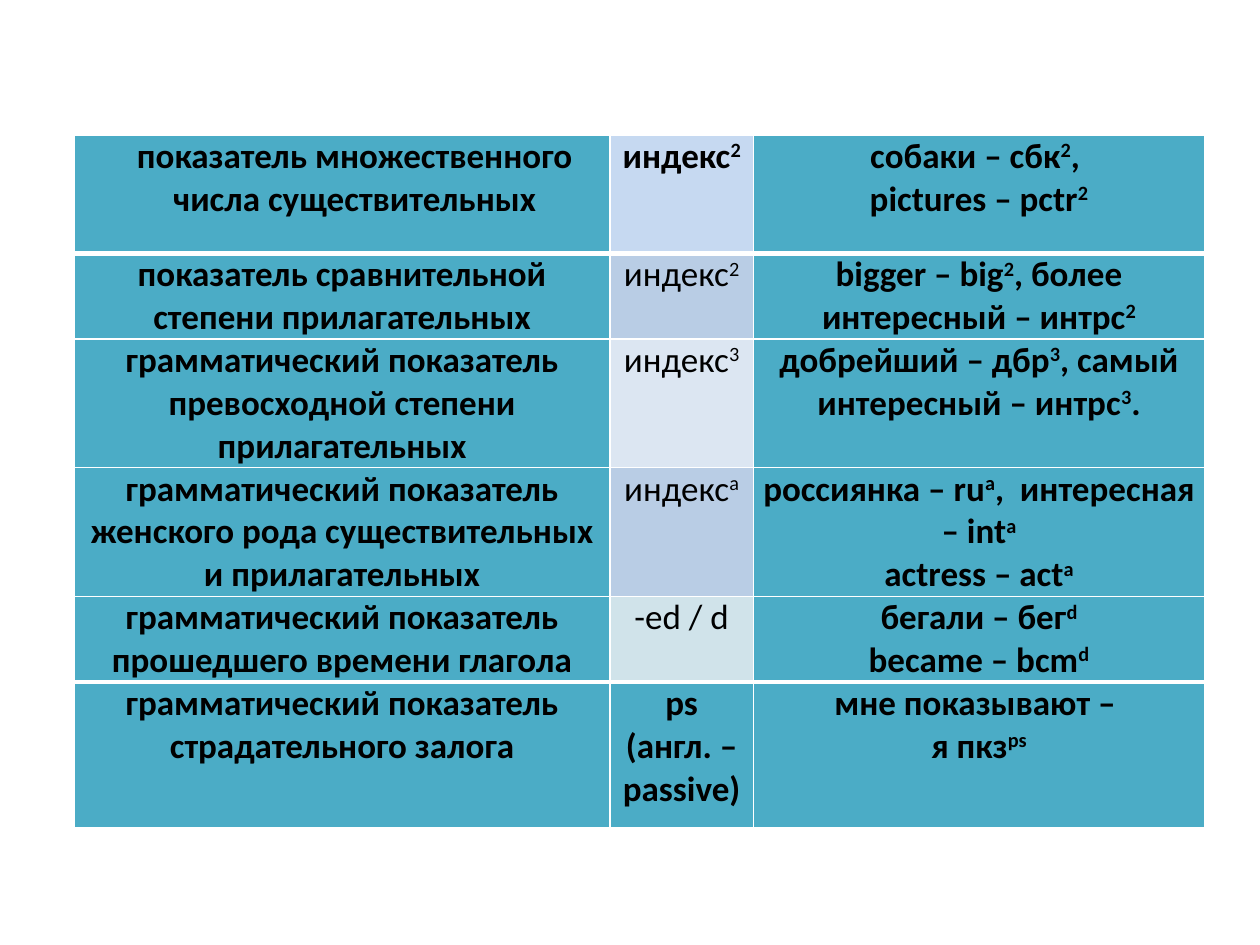
import pptx
import pptx.dml.color
import pptx.enum.text
import pptx.oxml
import pptx.oxml.ns
import pptx.util
from pptx.util import Inches

COLORS = {
    "teal": "4BACC6",
    "sky": "C6D9F1",
    "steel": "B9CDE5",
    "mist": "DCE6F2",
    "pale": "D0E3EA",
    "text": "000000",
    "border": "FFFFFF",
}
COLUMN_WIDTHS = [4.25, 1.14, 3.58]
ROW_HEIGHTS = [0.94, 0.37, 0.37, 0.37, 0.37, 1.16]
THICK_RULES = (1, 5)

# Text between carets is superscript.
ROWS = [
    ("показатель множественного числа существительных",
     "индекс^2^", "sky", True,
     ["собаки – сбк^2^, ", "pictures – pctr^2^"]),
    ("показатель сравнительной степени прилагательных",
     "индекс^2^", "steel", False,
     ["bigger – big^2^, более интересный – интрс^2^"]),
    ("грамматический показатель превосходной степени прилагательных",
     "индекс^3^", "mist", False,
     ["добрейший – дбр^3^, самый интересный – интрс^3^."]),
    ("грамматический показатель женского рода существительных и прилагательных",
     "индекс^а^", "steel", False,
     ["россиянка – ru^а^,  интересная – int^а^", "actress – act^a^"]),
    ("грамматический показатель прошедшего времени глагола",
     "-ed / d", "pale", False,
     ["бегали – бег^d^", "became – bcm^d^"]),
    ("грамматический показатель страдательного залога",
     "ps (англ. –passive)", "teal", True,
     ["мне показывают – ", "я пкз^ps^"]),
]


def rgb(name):
    return pptx.dml.color.RGBColor.from_string(COLORS[name])


def add_xml(parent, xml, index):
    namespace = pptx.oxml.ns.nsdecls("a")
    parent.insert(index, pptx.oxml.parse_xml(xml.replace(" ", f" {namespace} ", 1)))


def add_span(para, text, bold, raised):
    span = para.add_run()
    span.text = text
    span.font.name = "Calibri"
    span.font.size = pptx.util.Pt(20)
    span.font.bold = bold
    span.font.color.rgb = rgb("text")
    if raised:
        span.font._element.set("baseline", "30000")


def write_lines(cell, lines, bold):
    frame = cell.text_frame
    for index, line in enumerate(lines):
        para = frame.add_paragraph() if index else frame.paragraphs[0]
        para.alignment = pptx.enum.text.PP_ALIGN.CENTER
        for position, text in enumerate(line.split("^")):
            if text:
                add_span(para, text, bold, position % 2 == 1)


def set_borders(cell, row):
    top = 3 if row in THICK_RULES else 1
    bottom = 3 if row + 1 in THICK_RULES else 1
    properties = cell._tc.get_or_add_tcPr()
    sides = (("lnL", 1), ("lnR", 1), ("lnT", top), ("lnB", bottom))
    for index, (side, width) in enumerate(sides):
        add_xml(
            properties,
            f'<a:{side} w="{pptx.util.Pt(width)}"><a:solidFill>'
            f'<a:srgbClr val="{COLORS["border"]}"/></a:solidFill></a:{side}>',
            index,
        )


def fill_cell(cell, row, lines, color, bold):
    cell.margin_left = cell.margin_right = Inches(0.07)
    cell.margin_top = cell.margin_bottom = 0
    cell.fill.solid()
    cell.fill.fore_color.rgb = rgb(color)
    set_borders(cell, row)
    write_lines(cell, lines, bold)


def indent_with_tabs(para):
    properties = para._p.get_or_add_pPr()
    properties.set("marL", str(Inches(0.2)))
    properties.set("indent", "0")
    stops = "".join(
        f'<a:tab pos="{Inches(stop)}" algn="l"/>' for stop in (0.2, 0.59)
    )
    add_xml(properties, f"<a:tabLst >{stops}</a:tabLst>", len(properties))


def add_index_table(page):
    holder = page.shapes.add_table(
        len(ROWS), len(COLUMN_WIDTHS),
        Inches(0.59), Inches(1.07), Inches(8.98), Inches(5.43),
    )
    table = holder.table
    table.first_row = False
    table.horz_banding = False
    for column, width in zip(table.columns, COLUMN_WIDTHS):
        column.width = Inches(width)
    for row, height in zip(table.rows, ROW_HEIGHTS):
        row.height = Inches(height)
    holder.height = Inches(5.43)
    for row, (meaning, sign, color, bold, examples) in enumerate(ROWS):
        fill_cell(table.cell(row, 0), row, [meaning], "teal", True)
        fill_cell(table.cell(row, 1), row, [sign], color, bold)
        fill_cell(table.cell(row, 2), row, examples, "teal", True)
    indent_with_tabs(table.cell(0, 0).text_frame.paragraphs[0])


def main():
    deck = pptx.Presentation()
    deck.slide_width = Inches(10)
    deck.slide_height = Inches(7.5)
    page = deck.slides.add_slide(deck.slide_layouts[6])
    add_index_table(page)
    deck.save("out.pptx")


if __name__ == "__main__":
    main()
